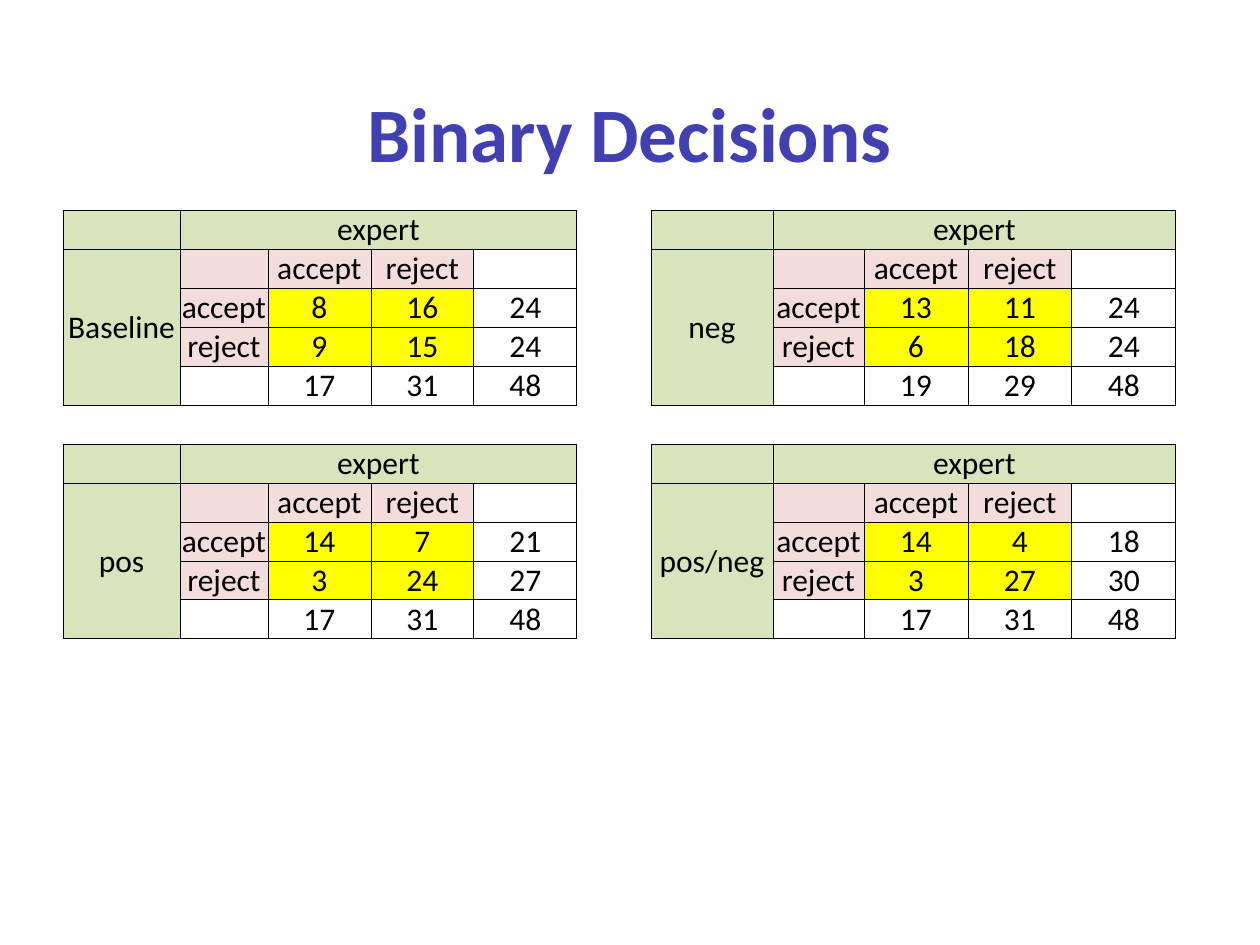
from pptx import Presentation
from pptx.dml.color import RGBColor as RGB
from pptx.enum.text import MSO_ANCHOR as Anchor, PP_ALIGN as Align
from pptx.oxml import parse_xml
from pptx.util import Pt

PX = 914400 / 126
COLORS = {
    "title": "4040B3",
    "text": "000000",
    "green": "D7E4BC",
    "pink": "F2DDDC",
    "yellow": "FFFF00",
}
NS = "http://schemas.openxmlformats.org/drawingml/2006/main"
ROW = 39


def px(n):
    return round(n * PX)


def write(frame, text, size, color, bold=False):
    para = frame.paragraphs[0]
    para.alignment = Align.CENTER
    run = para.add_run()
    run.text = text
    run.font.name = "Calibri"
    run.font.size = Pt(size)
    run.font.bold = bold
    run.font.color.rgb = RGB.from_string(COLORS[color])


deck = Presentation()
deck.slide_width, deck.slide_height = px(1260), px(945)
slide = deck.slides.add_slide(deck.slide_layouts[6])

box = slide.shapes.add_textbox(px(95), px(53), px(1070), px(157))
box.text_frame.word_wrap = True
box.text_frame.vertical_anchor = Anchor.MIDDLE
write(box.text_frame, "Binary Decisions", 44, "title", True)

tables = [
    (63, [117, 88, 103, 103, 103], Anchor.BOTTOM,
     [("Baseline", (8, 16), (9, 15)), ("pos", (14, 7), (3, 24))]),
    (651, [122, 91, 104, 104, 104], Anchor.MIDDLE,
     [("neg", (13, 11), (6, 18)), ("pos/neg", (14, 4), (3, 27))]),
]
fills = [
    ["green"] * 5,
    ["green", "pink", "pink", "pink", None],
    ["green", "pink", "yellow", "yellow", None],
    ["green", "pink", "yellow", "yellow", None],
    ["green", None, None, None, None],
]

for left, widths, anchor, blocks in tables:
    grid, tints = [], []
    for name, yes, no in blocks:
        sums = [a + b for a, b in zip(yes, no)]
        if grid:
            grid.append([""] * 5)
            tints.append([None] * 5)
        grid += [
            ["", "expert", "", "", ""],
            [name, "", "accept", "reject", ""],
            ["", "accept", *yes, sum(yes)],
            ["", "reject", *no, sum(no)],
            ["", "", *sums, sum(sums)],
        ]
        tints += fills

    count = len(grid)
    frame = slide.shapes.add_table(
        count, 5, px(left), px(210), px(sum(widths)), px(ROW * count))
    table = frame.table
    table.first_row = False
    table.horz_banding = False
    for col, width in zip(table.columns, widths):
        col.width = px(width)
    for row in table.rows:
        row.height = px(ROW)
    for top in (0, 6):
        table.cell(top, 1).merge(table.cell(top, 4))
        table.cell(top + 1, 0).merge(table.cell(top + 4, 0))

    for r, line in enumerate(grid):
        for c, value in enumerate(line):
            cell = table.cell(r, c)
            cell.margin_left = cell.margin_right = cell.margin_top = px(1)
            cell.margin_bottom = 0
            cell.vertical_anchor = Anchor.MIDDLE if c == 0 else anchor
            props = cell._tc.get_or_add_tcPr()
            for side in "LRTB":
                paint = f'<a:solidFill><a:srgbClr val="{COLORS["text"]}"/></a:solidFill>'
                if r == 5 and side in "LR":
                    paint = "<a:noFill/>"
                props.append(parse_xml(
                    f'<a:ln{side} xmlns:a="{NS}" w="6350">{paint}</a:ln{side}>'))
            tint = tints[r][c]
            if tint:
                cell.fill.solid()
                cell.fill.fore_color.rgb = RGB.from_string(COLORS[tint])
            else:
                cell.fill.background()
            if value != "":
                write(cell.text_frame, str(value), 18, "text")
            else:
                cell.text_frame.paragraphs[0].font.size = Pt(18)

deck.save("out.pptx")
